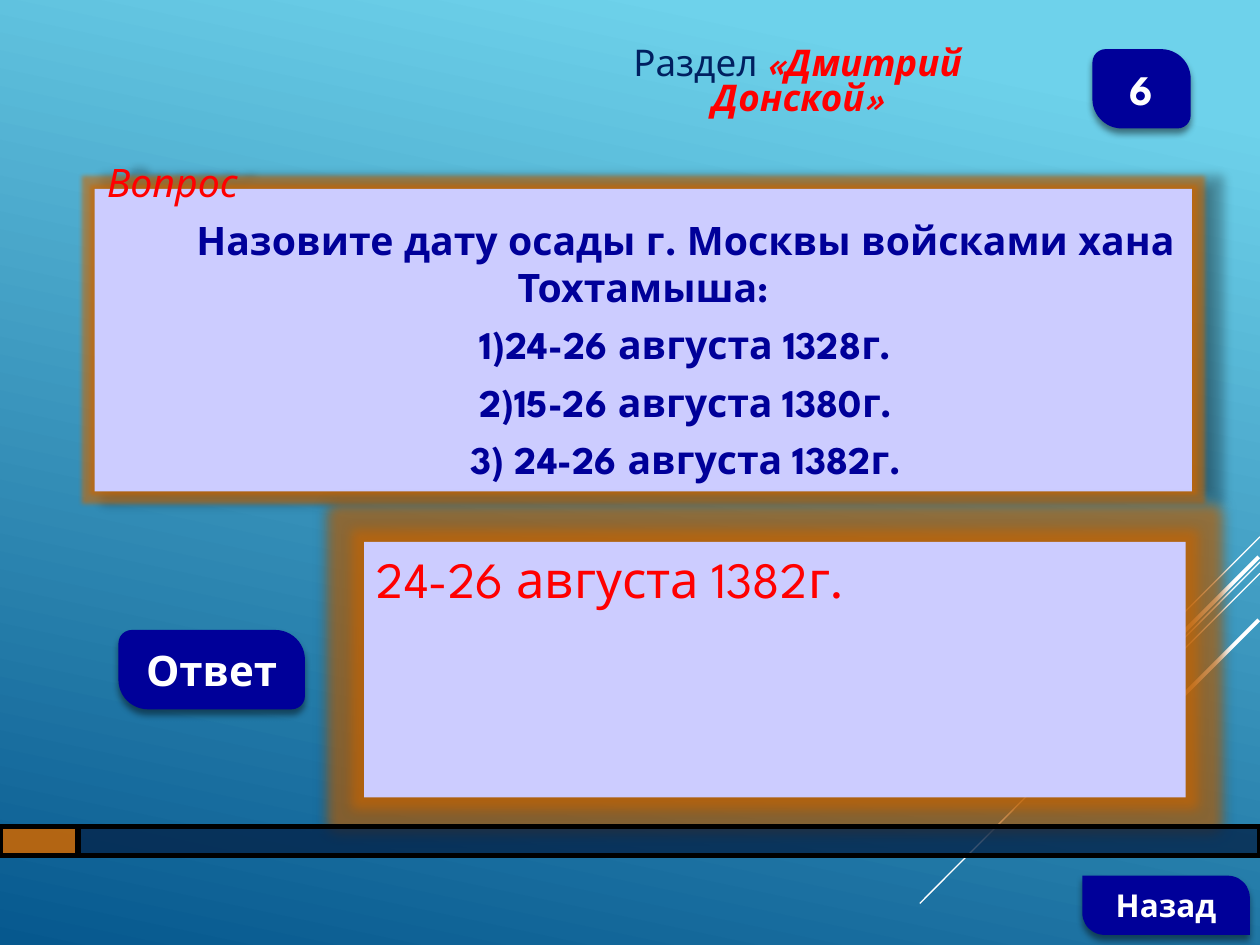
from lxml import etree
from pptx import Presentation
from pptx.dml.color import RGBColor
from pptx.enum.shapes import MSO_CONNECTOR, MSO_SHAPE
from pptx.enum.text import MSO_ANCHOR, PP_ALIGN
from pptx.oxml.ns import qn
from pptx.util import Inches, Pt

RECT = MSO_SHAPE.RECTANGLE
BUTTON = MSO_SHAPE.ROUND_2_DIAG_RECTANGLE
STRAIGHT = MSO_CONNECTOR.STRAIGHT
TOP, MIDDLE = MSO_ANCHOR.TOP, MSO_ANCHOR.MIDDLE
LEFT, CENTER = PP_ALIGN.LEFT, PP_ALIGN.CENTER

COLORS = {
    "sky": "6ED2EB", "sea": "06588E", "white": "FFFFFF", "black": "000000",
    "panel": "CCCCFF", "blue": "000099", "red": "FF0000", "navy": "002060",
    "orange": "CC6600", "bar": "042349",
}


def rgb(name):
    return RGBColor.from_string(COLORS[name])


def add_color(parent, name, alpha):
    clr = etree.SubElement(parent, qn("a:srgbClr"), val=COLORS[name])
    etree.SubElement(clr, qn("a:alpha"), val=str(alpha * 1000))


class QuizSlide:
    font = "League Spartan"

    def __init__(self, prs):
        self.s = prs.slides.add_slide(prs.slide_layouts[6])

    def background(self):
        fill = self.s.background.fill
        fill.gradient()
        fill.gradient_angle = 258
        for stop, position, name in zip(fill.gradient_stops, (0.1, 1), ("sky", "sea")):
            stop.position = position
            stop.color.rgb = rgb(name)

    def ray(self, x1, y1, x2, y2, width):
        line = self.s.shapes.add_connector(STRAIGHT, *map(Inches, (x1, y1, x2, y2)))
        line.line.color.rgb = rgb("white")
        line.line.width = Pt(width)
        etree.SubElement(line._element.spPr, qn("a:effectLst"))

    def box(self, kind, at, fill, alpha=None, border=None):
        sp = self.s.shapes.add_shape(kind, *map(Inches, at))
        sp.shadow.inherit = False
        sp.fill.solid()
        sp.fill.fore_color.rgb = rgb(fill)
        if alpha:
            clr = sp._element.spPr.find(qn("a:solidFill"))[0]
            etree.SubElement(clr, qn("a:alpha"), val=str(alpha * 1000))
        if border:
            sp.line.color.rgb = rgb("black")
            sp.line.width = Pt(border)
        else:
            sp.line.fill.background()
        return sp

    def effects(self, sp, alpha, blur, dist, angle, glow=None):
        """Give a soft shadow and, if a radius in points is set, an orange glow."""
        effects = sp._element.spPr.find(qn("a:effectLst"))
        if glow:
            add_color(etree.SubElement(effects, qn("a:glow"), rad=str(Pt(glow))),
                      "orange", 60)
        shadow = etree.SubElement(
            effects, qn("a:outerShdw"), blurRad=str(Pt(blur)), dist=str(Pt(dist)),
            dir=str(angle * 60000), algn="ctr", rotWithShape="0")
        add_color(shadow, "black", alpha)

    def paragraph(self, tf, runs, size, align=LEFT, first=True, **spacing):
        """Write runs of (text, colour, bold, italic) into one paragraph."""
        p = tf.paragraphs[0] if first else tf.add_paragraph()
        p.alignment = align
        for name, value in spacing.items():
            setattr(p, name, value)
        for text, color, bold, italic in runs:
            r = p.add_run()
            r.text = text
            r.font.name, r.font.size = self.font, Pt(size)
            r.font.bold, r.font.italic = bold, italic
            r.font.color.rgb = rgb(color)
        return p

    def button(self, text, at, size, corner=0.167):
        sp = self.box(BUTTON, at, "blue")
        sp.adjustments[0], sp.adjustments[1] = corner, 0.373
        self.effects(sp, 46, 4, 3, 90)
        sp.text_frame.vertical_anchor = MIDDLE
        self.paragraph(sp.text_frame, [(text, "white", True, False)], size, CENTER)

    def heading(self, runs, at):
        tf = self.s.shapes.add_textbox(*map(Inches, at)).text_frame
        tf.word_wrap = True
        tf.vertical_anchor = MIDDLE
        self.paragraph(tf, runs, 21, CENTER, line_spacing=0.8)

    def question(self, label, lines, at):
        sp = self.box(RECT, at, "panel")
        self.effects(sp, 40, 5, 11, 0, glow=5)
        tf = sp.text_frame
        tf.vertical_anchor = MIDDLE
        tf.margin_bottom = Inches(0.36)
        self.paragraph(tf, [(label, "red", False, True)], 22.4, space_after=Pt(6))
        for line in lines:
            p = self.paragraph(tf, [(line, "blue", True, False)], 22.4, CENTER,
                               first=False, space_after=Pt(6))
            p._p.get_or_add_pPr().set("indent", str(Inches(0.68)))

    def answer(self, text, at):
        sp = self.box(RECT, at, "panel")
        self.effects(sp, 40, 5, 0, 0, glow=14)
        sp.text_frame.vertical_anchor = TOP
        self.paragraph(sp.text_frame, [(text, "red", False, False)], 29,
                       space_before=Pt(7))


def main():
    prs = Presentation()
    prs.slide_width, prs.slide_height = Inches(10), Inches(7.5)
    quiz = QuizSlide(prs)
    quiz.background()

    for ray in (
        (10, 4.26, 9.17, 5.09, 0.75),
        (10, 4.46, 7.3, 7.17, 0.75),
        (10, 4.55, 8.28, 6.27, 0.75),
        (9.99, 4.42, 8.42, 5.99, 2.25),
        (9.99, 4.92, 8.85, 6.06, 2.25),
    ):
        quiz.ray(*ray)

    quiz.question("Вопрос", (
        "Назовите дату осады г. Москвы войсками хана Тохтамыша:",
        "1)24-26 августа 1328г.",
        "2)15-26 августа 1380г.",
        "3) 24-26 августа 1382г.",
    ), (0.75, 1.5, 8.71, 2.4))
    quiz.button("Ответ", (0.94, 5, 1.48, 0.63), 24)
    quiz.heading([("Раздел ", "navy", False, False),
                  ("«Дмитрий Донской»", "red", True, True)], (4.22, 0.31, 4.22, 0.7))
    quiz.answer("24-26 августа 1382г.", (2.89, 4.3, 6.52, 2.03))
    quiz.button("Назад", (8.59, 6.95, 1.33, 0.47), 18, corner=0)
    quiz.button("6", (8.67, 0.39, 0.78, 0.63), 24)

    quiz.box(RECT, (0, 6.56, 0.62, 0.23), "orange", alpha=87, border=3)
    quiz.box(RECT, (0.62, 6.56, 9.38, 0.23), "bar", alpha=78, border=3)
    prs.save("out.pptx")


if __name__ == "__main__":
    main()
